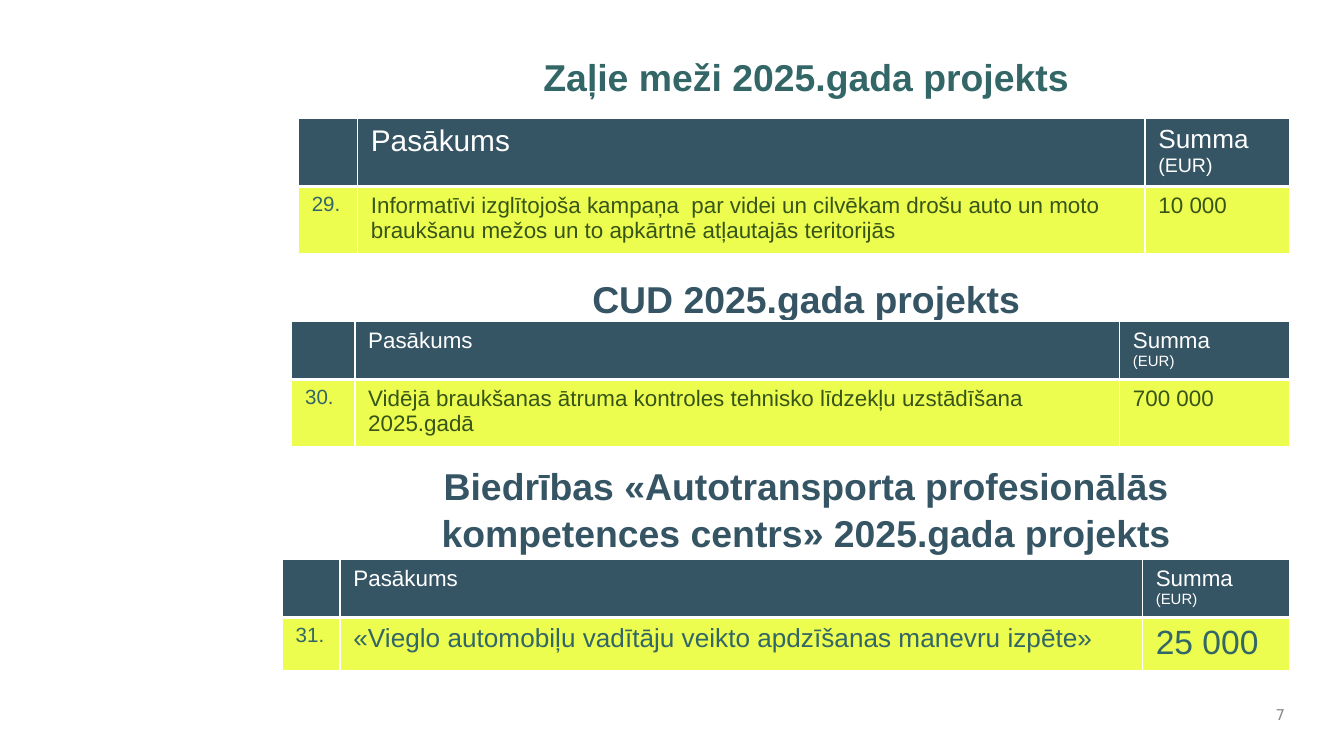
"""Build the slide with three project tables and their headings."""
from dataclasses import dataclass

from lxml.etree import SubElement
from pptx import Presentation
from pptx.dml.color import RGBColor as Color
from pptx.enum.text import MSO_ANCHOR as Anchor, PP_ALIGN as Align
from pptx.oxml.ns import qn
from pptx.util import Inches, Pt


@dataclass(frozen=True)
class Theme:
    font: str = "Arial"
    number_font: str = "DejaVu Sans"
    navy: str = "355464"
    teal: str = "336666"
    lime: str = "ECFD4F"
    green: str = "375518"
    white: str = "FFFFFF"
    gray: str = "898989"
    heading: float = 20
    number: float = 11
    body: float = 12
    large: float = 14
    page: float = 8


theme = Theme()
presentation = Presentation()
presentation.slide_width = Inches(10)
presentation.slide_height = Inches(5.625)
slide = presentation.slides.add_slide(presentation.slide_layouts[6])
column = presentation.slide_width / 100
row = presentation.slide_height / 100
TABLE_RIGHT = 96
ROW_HEIGHTS = (7.11, 6.58)


def write(frame, lines, color, align=Align.LEFT, bold=False, font=theme.font, spacing=None):
    frame.word_wrap = True
    for index, (text, size) in enumerate(lines):
        paragraph = frame.add_paragraph() if index else frame.paragraphs[0]
        paragraph.alignment = align
        if spacing:
            paragraph.line_spacing = spacing
        run = paragraph.add_run()
        run.text = text
        run.font.name = font
        run.font.size = Pt(size)
        run.font.bold = bold
        run.font.color.rgb = Color.from_string(color)


def style_cell(cell, fill, borders):
    properties = cell._tc.get_or_add_tcPr()
    for side, width in borders:
        line = SubElement(properties, qn(f"a:{side}"), w=str(Pt(width)))
        solid = SubElement(line, qn("a:solidFill"))
        SubElement(solid, qn("a:srgbClr"), val=theme.white)
    cell.fill.solid()
    cell.fill.fore_color.rgb = Color.from_string(fill)


projects = [
    dict(heading="Zaļie meži 2025.gada projekts", color=theme.teal,
         heading_top=6.04, heading_height=9.07, table_top=15.64, columns=(4.4, 58.6, 10.8),
         header_sizes=(16, theme.large, 10.5), number="29.",
         measure=("Informatīvi izglītojoša kampaņa  par videi un cilvēkam drošu auto un moto "
                  "braukšanu mežos un to apkārtnē atļautajās teritorijās", theme.body),
         amount=("10 000", theme.body), text_color=theme.green),
    dict(heading="CUD 2025.gada projekts", color=theme.navy,
         heading_top=35.38, heading_height=10.13, table_top=42.49, columns=(4.7, 56.9, 12.7),
         header_sizes=(theme.body, theme.body, 8), number="30.",
         measure=("Vidējā braukšanas ātruma kontroles tehnisko līdzekļu uzstādīšana 2025.gadā",
                  theme.body),
         amount=("700 000", theme.body), text_color=theme.green),
    dict(heading="Biedrības «Autotransporta profesionālās kompetences centrs» 2025.gada projekts",
         color=theme.navy,
         heading_top=60.09, heading_height=15.47, table_top=73.96, columns=(4.3, 59.7, 11),
         header_sizes=(theme.body, theme.body, 8), number="31.",
         measure=("«Vieglo automobiļu vadītāju veikto apdzīšanas manevru izpēte»", theme.large),
         amount=("25 000", 18), text_color=theme.teal),
]

for project in projects:
    heading = slide.shapes.add_textbox(
        int(26.67 * column), int(project["heading_top"] * row),
        int(66.67 * column), int(project["heading_height"] * row))
    write(heading.text_frame, [(project["heading"], theme.heading)], project["color"],
          Align.CENTER, bold=True, spacing=1.05)

    width = sum(project["columns"])
    table = slide.shapes.add_table(
        2, 3, int((TABLE_RIGHT - width) * column), int(project["table_top"] * row),
        int(width * column), int(sum(ROW_HEIGHTS) * row)).table
    for table_column, share in zip(table.columns, project["columns"]):
        table_column.width = int(share * column)
    for table_row, share in zip(table.rows, ROW_HEIGHTS):
        table_row.height = int(share * row)

    measure_size, sum_size, unit_size = project["header_sizes"]
    header = [[], [("Pasākums", measure_size)], [("Summa", sum_size), ("(EUR)", unit_size)]]
    body = [[(project["number"], theme.number)], [project["measure"]], [project["amount"]]]
    body_colors = (theme.teal, project["text_color"], project["text_color"])
    body_borders = ([("lnR", 1)], [("lnL", 1), ("lnR", 1)], [("lnL", 1)])
    for index in range(3):
        style_cell(table.cell(0, index), theme.navy, [("lnB", 2)])
        write(table.cell(0, index).text_frame, header[index], theme.white)
        style_cell(table.cell(1, index), theme.lime, body_borders[index] + [("lnT", 2)])
        write(table.cell(1, index).text_frame, body[index], body_colors[index])

page_number = slide.shapes.add_textbox(
    int(93.3 * column), int(92.27 * row), int(3.3 * column), int(4.44 * row))
page_number.text_frame.vertical_anchor = Anchor.MIDDLE
write(page_number.text_frame, [("7", theme.page)], theme.gray, Align.RIGHT,
      font=theme.number_font)

presentation.save("out.pptx")
